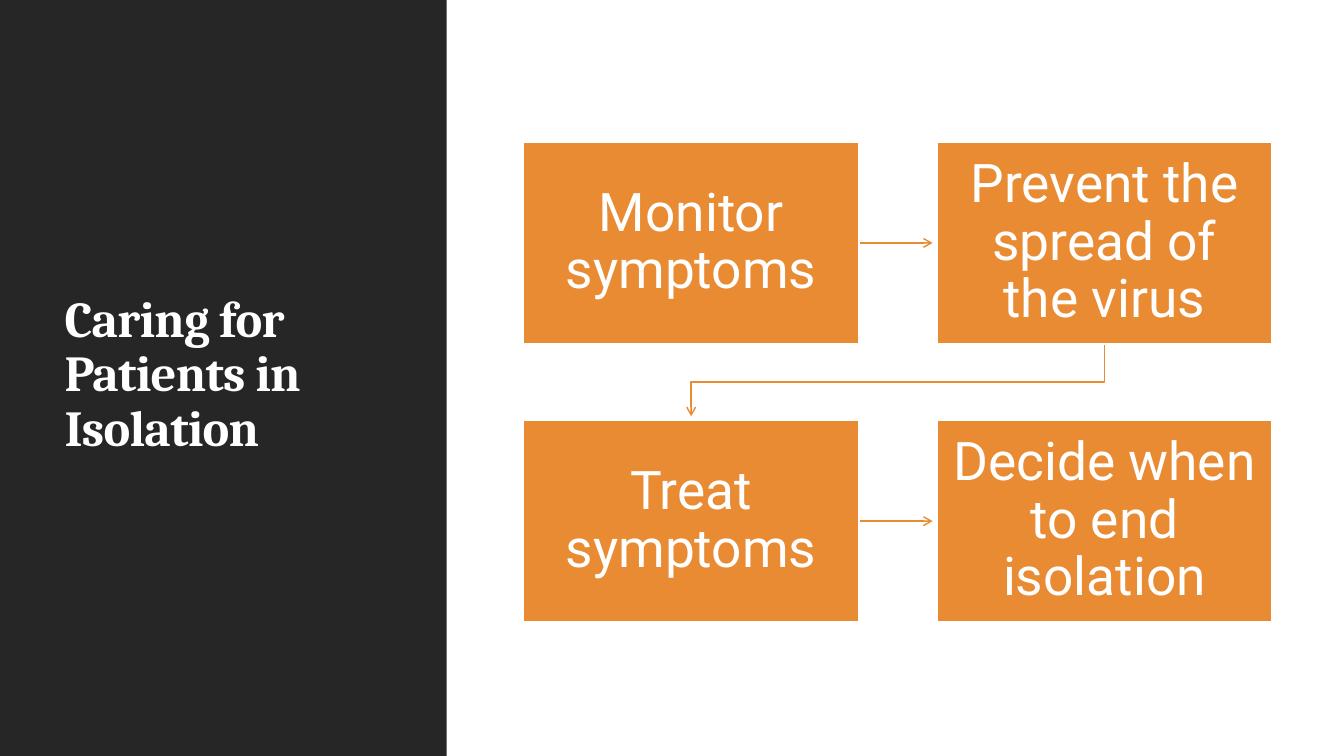
import dataclasses

import pptx
import pptx.dml.color
import pptx.enum.shapes
import pptx.enum.text
import pptx.oxml
import pptx.oxml.ns
import pptx.util

Inches = pptx.util.Inches
Pt = pptx.util.Pt
RGB = pptx.dml.color.RGBColor.from_string
Align = pptx.enum.text.PP_ALIGN


@dataclasses.dataclass(frozen=True)
class Theme:
    dark: str = "262626"
    white: str = "FFFFFF"
    orange: str = "E88B33"
    title_font: str = "Cambria"
    body_font: str = "Roboto"
    title_size: int = 36
    step_size: int = 38
    arrow_width: float = 1
    border_width: float = 1.25


THEME = Theme()

# Step grid
STEPS = ["Monitor symptoms", "Prevent the spread of the virus",
         "Treat symptoms", "Decide when to end isolation"]
COLUMNS = 2
GRID_LEFT, GRID_TOP = 5.19, 1.41
STEP_WIDTH, STEP_HEIGHT = 3.33, 2
COLUMN_PITCH, ROW_PITCH = 4.1, 2.76
ARROW_GAP = 0.04


def write_text(frame, text, *, font, size, color, bold=False, align=Align.LEFT,
               spacing=None, margins=(0.1, 0.05)):
    frame.word_wrap = True
    frame.auto_size = pptx.enum.text.MSO_AUTO_SIZE.NONE
    frame.vertical_anchor = pptx.enum.text.MSO_ANCHOR.MIDDLE
    frame.margin_left = frame.margin_right = Inches(margins[0])
    frame.margin_top = frame.margin_bottom = Inches(margins[1])
    paragraph = frame.paragraphs[0]
    paragraph.alignment = align
    paragraph.line_spacing = 0.9
    run = paragraph.add_run()
    run.text = text
    run.font.name = font
    run.font.size = Pt(size)
    run.font.bold = bold
    run.font.color.rgb = RGB(color)
    if spacing is not None:
        run.font._element.set("spc", str(round(spacing * 100)))


def add_box(slide, left, top, width, height, *, fill, border=None):
    box = slide.shapes.add_shape(
        pptx.enum.shapes.MSO_SHAPE.RECTANGLE,
        Inches(left), Inches(top), Inches(width), Inches(height))
    box.shadow.inherit = False
    box.fill.solid()
    box.fill.fore_color.rgb = RGB(fill)
    if border:
        box.line.color.rgb = RGB(border)
        box.line.width = Pt(THEME.border_width)
    else:
        box.line.fill.background()
    return box


def add_step(slide, text, left, top):
    step = add_box(slide, left, top, STEP_WIDTH, STEP_HEIGHT,
                   fill=THEME.orange, border=THEME.white)
    write_text(step.text_frame, text, font=THEME.body_font, size=THEME.step_size,
               color=THEME.white, align=Align.CENTER, margins=(0.16, 0.17))


def style_arrow(arrow):
    arrow.line.color.rgb = RGB(THEME.orange)
    arrow.line.width = Pt(THEME.arrow_width)
    head = pptx.oxml.parse_xml(
        '<a:tailEnd %s type="arrow"/>' % pptx.oxml.ns.nsdecls("a"))
    arrow.line._get_or_add_ln().append(head)


def add_straight_arrow(slide, start, end):
    arrow = slide.shapes.add_connector(
        pptx.enum.shapes.MSO_CONNECTOR.STRAIGHT,
        *(Inches(value) for value in start + end))
    style_arrow(arrow)
    arrow._element.spPr.append(pptx.oxml.parse_xml(
        "<a:effectLst %s/>" % pptx.oxml.ns.nsdecls("a")))


def add_bent_arrow(slide, points):
    corners = [(Inches(x), Inches(y)) for x, y in points]
    builder = slide.shapes.build_freeform(*corners[0])
    builder.add_line_segments(corners[1:], close=False)
    arrow = builder.convert_to_shape()
    arrow.shadow.inherit = False
    arrow.fill.background()
    style_arrow(arrow)


def add_title_panel(slide):
    title = slide.shapes.title
    panel = add_box(slide, 0, 0, 4.43, 7.5, fill=THEME.dark)
    title._element.addprevious(panel._element)  # panel sits behind the title
    title.left, title.top = Inches(0.54), Inches(0.57)
    title.width, title.height = Inches(3.37), Inches(6.31)
    write_text(title.text_frame, "Caring for Patients in Isolation",
               font=THEME.title_font, size=THEME.title_size,
               color=THEME.white, bold=True, spacing=-0.5)


def add_process(slide):
    places = [(GRID_LEFT + i % COLUMNS * COLUMN_PITCH,
               GRID_TOP + i // COLUMNS * ROW_PITCH) for i in range(len(STEPS))]

    # Arrows: across each row, or down to the start of the next row
    for (left, top), (next_left, next_top) in zip(places, places[1:]):
        if top == next_top:
            middle = top + STEP_HEIGHT / 2
            add_straight_arrow(slide, (left + STEP_WIDTH, middle),
                               (next_left - ARROW_GAP, middle))
        else:
            start_x, end_x = left + STEP_WIDTH / 2, next_left + STEP_WIDTH / 2
            bottom = top + STEP_HEIGHT
            bend = (bottom + next_top) / 2
            add_bent_arrow(slide, [(start_x, bottom), (start_x, bend),
                                   (end_x, bend), (end_x, next_top - ARROW_GAP)])

    # Steps
    for text, (left, top) in zip(STEPS, places):
        add_step(slide, text, left, top)


def main():
    deck = pptx.Presentation()
    deck.slide_width, deck.slide_height = Inches(13.33), Inches(7.5)
    slide = deck.slides.add_slide(deck.slide_layouts.get_by_name("Title Only"))
    slide.background.fill.solid()
    slide.background.fill.fore_color.rgb = RGB(THEME.white)
    add_title_panel(slide)
    add_process(slide)
    deck.save("out.pptx")


if __name__ == "__main__":
    main()
